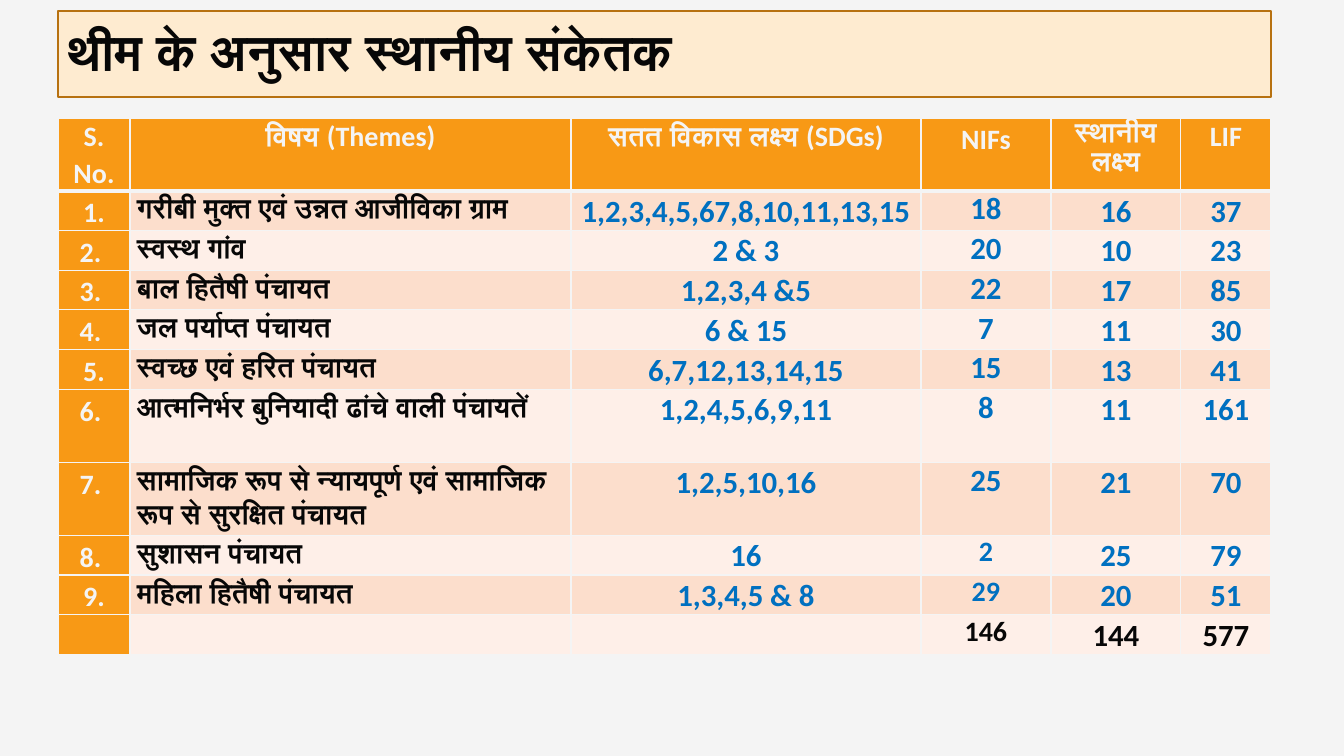
from lxml.etree import SubElement
from pptx import Presentation
from pptx.dml.color import RGBColor
from pptx.enum.text import MSO_ANCHOR, PP_ALIGN
from pptx.oxml.ns import qn
from pptx.util import Pt

PX = 914400 / 100.8
COLORS = {
    "light": "F4F4F4", "dark": "070707", "orange": "F89915", "gold": "B77110",
    "cream": "FEEBD0", "band": "FCDECC", "pale": "FEEFE8", "blue": "0070C0",
}
COL_WIDTHS = [72, 441, 350, 130, 130, 90]
ROW, TALL_ROW, HEADER_ROW = 39, 73, 71
TALL_THEMES = (6, 7)
SHIFTED_NUMBERS = (2, 3, 4, 6, 7, 8)
SMALL_NIFS = (8, 9, 10)
HEADERS = ["S. No.", "विषय (Themes)", "सतत विकास लक्ष्य (SDGs)", "NIFs",
           "स्थानीय लक्ष्य", "LIF"]
THEMES = [
    ("गरीबी मुक्त एवं उन्नत आजीविका ग्राम", "1,2,3,4,5,67,8,10,11,13,15", 18, 16, 37),
    ("स्वस्थ गांव", "2 & 3", 20, 10, 23),
    ("बाल हितैषी पंचायत", "1,2,3,4 &5", 22, 17, 85),
    ("जल पर्याप्त पंचायत", "6 & 15", 7, 11, 30),
    ("स्वच्छ एवं हरित पंचायत", "6,7,12,13,14,15", 15, 13, 41),
    ("आत्मनिर्भर बुनियादी ढांचे वाली पंचायतें", "1,2,4,5,6,9,11", 8, 11, 161),
    ("सामाजिक रूप से न्यायपूर्ण एवं सामाजिक रूप से सुरक्षित पंचायत", "1,2,5,10,16", 25, 21, 70),
    ("सुशासन पंचायत", "16", 2, 25, 79),
    ("महिला हितैषी पंचायत", "1,3,4,5 & 8", 29, 20, 51),
]
TOTALS = ["", "", "", 146, 144, 577]


def px(n):
    return round(n * PX)


def rgb(name):
    return RGBColor.from_string(COLORS[name])


def fill_solid(target, color):
    target.fill.solid()
    target.fill.fore_color.rgb = rgb(color)


def write(tf, text, size, color, align, spacing):
    p = tf.paragraphs[0]
    for name, value in {"alignment": align, "line_spacing": spacing}.items():
        setattr(p, name, value)
    r = p.add_run()
    r.text = text
    for name, value in {"name": "Calibri", "size": Pt(size), "bold": True}.items():
        setattr(r.font, name, value)
    r.font.color.rgb = rgb(color)


def add_borders(cell, top, bottom):
    tcPr = cell._tc.get_or_add_tcPr()
    for side, width in {"L": 1, "R": 1, "T": top, "B": bottom}.items():
        ln = SubElement(tcPr, qn(f"a:ln{side}"), w=str(Pt(width)))
        SubElement(SubElement(ln, qn("a:solidFill")), qn("a:srgbClr"), val=COLORS["light"])


def cell_format(row, col):
    """Return size, colour, alignment and line spacing of a cell."""
    if row == 0:
        return 20, "light", PP_ALIGN.CENTER, 1.15 if col == 3 else 1.06
    if col == 0:
        return 20, "light", PP_ALIGN.CENTER, 1.15
    if col == 1:
        return 20, "dark", PP_ALIGN.LEFT, 1.2
    color = "dark" if row > len(THEMES) else "blue"
    if col == 3:
        return 20 if row in SMALL_NIFS else 22, color, PP_ALIGN.CENTER, 1.0
    return 22, color, PP_ALIGN.CENTER, 1.06


def fill_cell(cell, row, col, text):
    margins = {"margin_left": 7, "margin_right": 7, "margin_top": 0, "margin_bottom": 0}
    if col == 0 and row in SHIFTED_NUMBERS:
        margins["margin_right"] = 14
    for name, value in margins.items():
        setattr(cell, name, px(value))
    add_borders(cell, top=3 if row == 1 else 1, bottom=3 if row == 0 else 1)
    body = "band" if row % 2 else "pale"
    fill_solid(cell, "orange" if row == 0 or col == 0 else body)
    if text:
        write(cell.text_frame, text, *cell_format(row, col))


def add_theme_table(s, x, y):
    rows = [HEADERS] + [[f"{i}.", *theme] for i, theme in enumerate(THEMES, 1)] + [TOTALS]
    heights = [HEADER_ROW] + [TALL_ROW if i in TALL_THEMES else ROW
                              for i in range(1, len(rows))]
    frame = s.shapes.add_table(len(rows), len(COL_WIDTHS), px(x), px(y),
                               px(sum(COL_WIDTHS)), px(sum(heights)))
    table = frame.table
    table.horz_banding = False
    for column, width in zip(table.columns, COL_WIDTHS):
        column.width = px(width)
    for i, (values, height) in enumerate(zip(rows, heights)):
        table.rows[i].height = px(height)
        for j, value in enumerate(values):
            fill_cell(table.cell(i, j), i, j, str(value))


def add_title(s, text, x, y, w, h):
    sp = s.shapes.title
    for name, value in {"left": x, "top": y, "width": w, "height": h}.items():
        setattr(sp, name, px(value))
    fill_solid(sp, "cream")
    sp.line.color.rgb = rgb("gold")
    sp.line.width = Pt(1)
    tf = sp.text_frame
    tf.word_wrap = True
    tf.vertical_anchor = MSO_ANCHOR.MIDDLE
    write(tf, text, 36, "dark", PP_ALIGN.LEFT, 0.9)


def main():
    prs = Presentation()
    prs.slide_width, prs.slide_height = px(1344), px(756)
    s = prs.slides.add_slide(prs.slide_layouts[5])
    fill_solid(s.background, "light")

    # Title bar
    add_title(s, "थीम के अनुसार स्थानीय संकेतक", 58, 11, 1213, 86)

    # Indicators by theme
    add_theme_table(s, 58, 118)

    prs.save("out.pptx")


if __name__ == "__main__":
    main()
